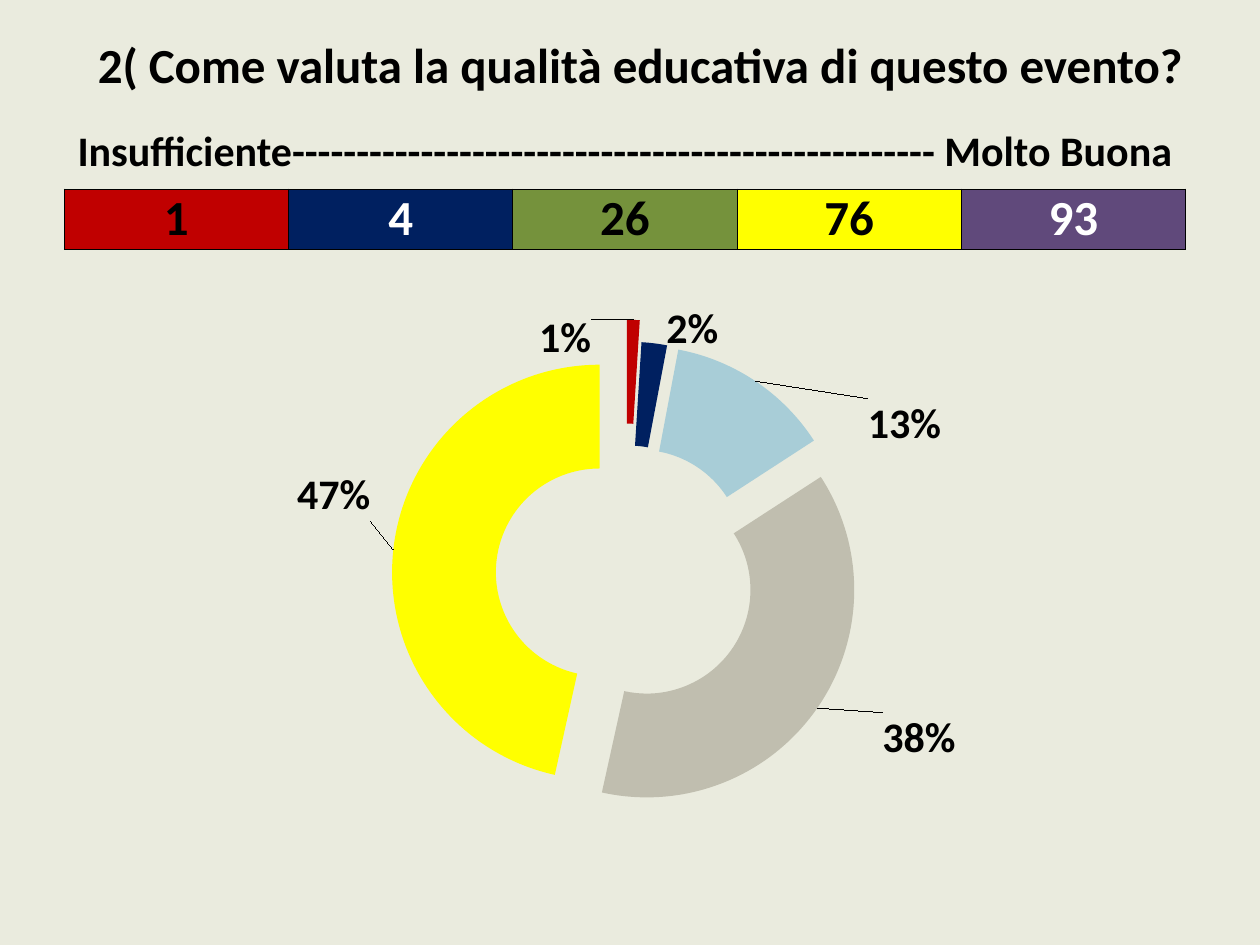
from dataclasses import dataclass

from lxml.etree import SubElement
from pptx import Presentation
from pptx.chart.data import CategoryChartData
from pptx.dml.color import RGBColor
from pptx.enum.chart import XL_CHART_TYPE as ChartType
from pptx.enum.text import MSO_ANCHOR as Anchor, PP_ALIGN as Align
from pptx.oxml import parse_xml
from pptx.oxml.ns import nsdecls, qn
from pptx.util import Inches, Pt


@dataclass(frozen=True)
class Theme:
    font: str = "Calibri"
    background: str = "EAEBDE"
    dark: str = "000000"
    light: str = "FFFFFF"
    large: int = 28
    medium: int = 24
    small: int = 10
    ratings: tuple = ("C00000", "002060", "75923C", "FFFF00", "60497B")
    slices: tuple = ("C00000", "002060", "A8CDD7", "C0BEAF", "FFFF00")


THEME = Theme()
TITLE = "2( Come valuta la qualità educativa di questo evento?"
SCALE = "Insufficiente" + "-" * 50 + " Molto Buona"
COUNTS = (1, 4, 26, 76, 93)
SHARES = (1, 2, 13, 38, 47)
LABEL_OFFSETS = ((-0.06, -0.06), (0.04, -0.12), (0.16, 0), (0.13, 0.11), (-0.1, -0.11))
PLAIN_TABLE = "{2D5ABB26-0587-4C30-8999-92F81FD0307C}"


def style_font(font, size, color=THEME.dark, bold=True):
    font.name = THEME.font
    font.size = Pt(size)
    font.bold = bold
    font.color.rgb = RGBColor.from_string(color)


def add_plain_table(page, rows, columns, left, top, width, height):
    frame = page.shapes.add_table(
        rows, columns, Inches(left), Inches(top), Inches(width), Inches(height)
    )
    table = frame.table
    table.first_row = table.horz_banding = False
    table._tbl.tblPr.find(qn("a:tableStyleId")).text = PLAIN_TABLE
    return table


def fill_cell(cell, text, size, color=THEME.dark, fill=None):
    cell.text = text
    cell.vertical_anchor = Anchor.MIDDLE
    cell.margin_left = cell.margin_right = cell.margin_top = cell.margin_bottom = 0
    para = cell.text_frame.paragraphs[0]
    para.alignment = Align.CENTER
    style_font(para.font, size, color)
    if fill:
        cell.fill.solid()
        cell.fill.fore_color.rgb = RGBColor.from_string(fill)
    else:
        cell.fill.background()


def add_borders(cell, sides):
    properties = cell._tc.get_or_add_tcPr()
    for index, side in enumerate(sides):
        line = parse_xml(
            f'<a:ln{side} {nsdecls("a")} w="{Pt(0.5)}"><a:solidFill>'
            f'<a:srgbClr val="{THEME.dark}"/></a:solidFill></a:ln{side}>'
        )
        properties.insert(index, line)


def add_title(page):
    table = add_plain_table(page, 1, 1, 0.67, 0.29, 8.82, 0.46)
    fill_cell(table.cell(0, 0), TITLE, THEME.large)


def add_rating_table(page):
    table = add_plain_table(page, 2, len(COUNTS), 0.51, 0.92, 8.9, 1.05)
    table.rows[0].height = Inches(0.58)
    table.rows[1].height = Inches(0.46)
    heading = table.cell(0, 0)
    heading.merge(table.cell(0, len(COUNTS) - 1))
    fill_cell(heading, SCALE, THEME.medium)
    add_borders(heading, "B")
    for column, (count, fill) in enumerate(zip(COUNTS, THEME.ratings)):
        cell = table.cell(1, column)
        color = THEME.light if column in (1, 4) else THEME.dark
        fill_cell(cell, str(count), THEME.large, color, fill)
        add_borders(cell, "LRTB")


def manual_layout(**values):
    layout = parse_xml(f'<c:layout {nsdecls("c")}><c:manualLayout/></c:layout>')
    for name, value in values.items():
        SubElement(layout[0], qn(f"c:{name}")).set("val", str(value))
    return layout


def explosion(percent):
    return parse_xml(f'<c:explosion {nsdecls("c")} val="{percent}"/>')


def show_percent(labels):
    labels.find(qn("c:showVal")).set("val", "0")
    labels.find(qn("c:showPercent")).set("val", "1")


def style_slices(series):
    labels = series.data_labels
    style_font(labels.font, THEME.medium)
    show_percent(labels._element)
    for index, (color, (x, y)) in enumerate(zip(THEME.slices, LABEL_OFFSETS)):
        point = series.points[index]
        fill = point.format.fill
        fill.solid()
        fill.fore_color.rgb = RGBColor.from_string(color)
        style_font(point.data_label.font, THEME.medium)
        label = labels._element.findall(qn("c:dLbl"))[index]
        label.find(qn("c:idx")).addnext(manual_layout(x=x, y=y))
        show_percent(label)
    first_slice = series._element.find(qn("c:dPt"))
    first_slice.find(qn("c:spPr")).addprevious(explosion(46))
    first_slice.addprevious(explosion(25))


def add_doughnut(page):
    data = CategoryChartData()
    data.categories = [str(rating) for rating in range(1, len(SHARES) + 1)]
    data.add_series("Series 1", SHARES)
    chart = page.shapes.add_chart(
        ChartType.DOUGHNUT_EXPLODED,
        Inches(0.51), Inches(2.41), Inches(8.82), Inches(4.31), data,
    ).chart
    chart.has_title = chart.has_legend = False
    style_font(chart.font, THEME.small, bold=False)
    plot = chart.plots[0]
    plot.vary_by_categories = True
    series = plot.series[0]
    for old in series._element.findall(qn("c:explosion")):
        series._element.remove(old)
    style_slices(series)
    area = chart._chartSpace.chart.plotArea
    for old in area.findall(qn("c:layout")):
        area.remove(old)
    area.insert(0, manual_layout(
        layoutTarget="inner", xMode="edge", yMode="edge", x=0.29, y=0.07, w=0.43, h=0.86,
    ))


def main():
    deck = Presentation()
    deck.slide_width, deck.slide_height = Inches(10), Inches(7.5)
    page = deck.slides.add_slide(deck.slide_layouts[6])
    background = page.background.fill
    background.solid()
    background.fore_color.rgb = RGBColor.from_string(THEME.background)
    add_title(page)
    add_rating_table(page)
    add_doughnut(page)
    deck.save("out.pptx")


if __name__ == "__main__":
    main()
